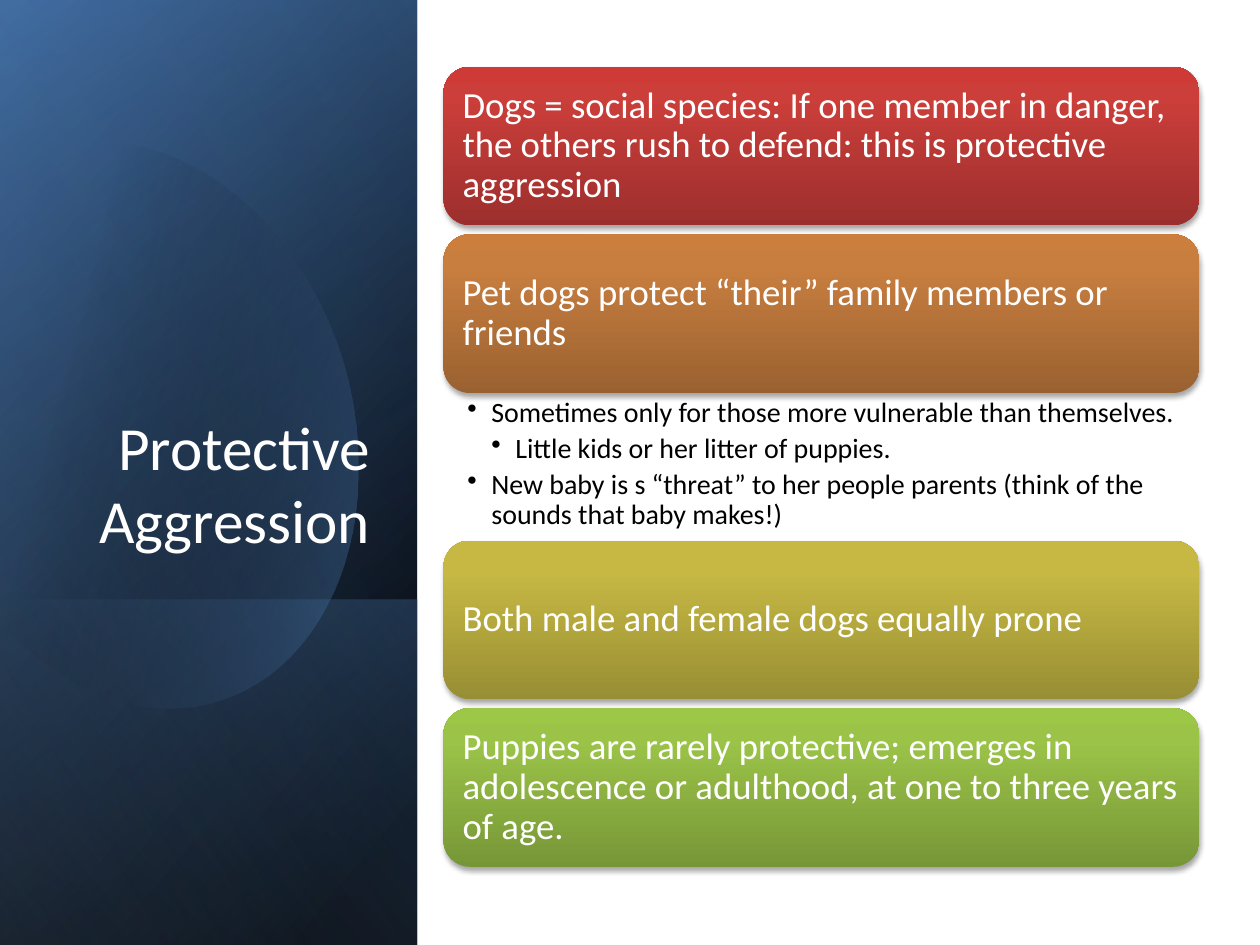
import itertools
from dataclasses import dataclass

import pptx
import pptx.dml.color
import pptx.enum.shapes
import pptx.enum.text
import pptx.oxml
import pptx.oxml.ns
import pptx.util

Inches = pptx.util.Inches
Pt = pptx.util.Pt
qn = pptx.oxml.ns.qn


@dataclass(frozen=True)
class Theme:
    font: str = "Calibri"
    light: str = "FFFFFF"
    dark: str = "000000"
    navy: str = "376092"
    blue: str = "4F81BD"
    pale_blue: str = "95B3D7"
    title_size: float = 35
    card_size: float = 21
    bullet_size: float = 16
    line_spacing: float = 0.9


@dataclass(frozen=True)
class Stop:
    position: int
    color: str
    opacity: int = 100


@dataclass(frozen=True)
class Panel:
    top: float
    height: float
    angle: float
    stops: tuple[Stop, ...]


@dataclass(frozen=True)
class Card:
    top: float
    text: str
    colors: tuple[str, str, str]


@dataclass(frozen=True)
class Bullet:
    text: str
    level: int


THEME = Theme()
PANEL_WIDTH = 3.31
CARD_LEFT, CARD_WIDTH, CARD_HEIGHT = 3.52, 6, 1.26
CARD_PITCH = 1.33
FIRST_PAIR_TOP, SECOND_PAIR_TOP = 0.53, 4.29
BULLET_INDENT = 0.19

BASE_PANELS = (
    Panel(0, 7.5, 50, (Stop(8, THEME.dark), Stop(100, THEME.navy))),
    Panel(0, 7.5, 30, (Stop(0, THEME.dark, 0), Stop(99, THEME.blue, 46))),
    Panel(4.76, 2.74, 130, (Stop(2, THEME.blue, 29), Stop(100, THEME.dark, 30))),
)
SHEEN_PANEL = Panel(0, 7.5, 120, (Stop(0, THEME.dark, 0), Stop(99, THEME.pale_blue, 11)))
OVAL_STOPS = (Stop(29, THEME.dark, 0), Stop(100, THEME.blue, 43))
OVAL_ANGLE = 14
OVAL_START = (0.96, 1.14)
OVAL_CURVES = (
    ((1.71, 1.22), (2.44, 1.92), (2.73, 2.9)),
    ((3.07, 4.12), (2.62, 5.31), (1.71, 5.57)),
    ((1.14, 5.74), (0.53, 5.5), (0.07, 5)),
    ((-0.03, 4.88),),
    ((-0.25, 1.66),),
    ((-0.15, 1.54),),
    ((0.02, 1.37), (0.22, 1.25), (0.45, 1.18)),
    ((0.62, 1.13), (0.79, 1.12), (0.96, 1.14)),
)
CARDS = (
    Card(FIRST_PAIR_TOP,
         "Dogs = social species: If one member in danger, the others rush to defend: "
         "this is protective aggression", ("9C2F2D", "CB3E3A", "CE3B37")),
    Card(FIRST_PAIR_TOP + CARD_PITCH,
         "Pet dogs protect “their” family members or friends", ("9A6130", "C87E3F", "CC7E3C")),
    Card(SECOND_PAIR_TOP,
         "Both male and female dogs equally prone", ("988E34", "C6B843", "C9BB41")),
    Card(SECOND_PAIR_TOP + CARD_PITCH,
         "Puppies are rarely protective; emerges in adolescence or adulthood, "
         "at one to three years of age.", ("779737", "9BC348", "9DC746")),
)
BULLETS = (
    Bullet("Sometimes only for those more vulnerable than themselves.", 1),
    Bullet("Little kids or her litter of puppies.", 2),
    Bullet("New baby is s “threat” to her people parents (think of the sounds that baby makes!)", 1),
)


def paint_gradient(shape, stops: tuple[Stop, ...], angle: float) -> None:
    shape.line.fill.background()
    shape.shadow.inherit = False
    shape.fill.background()
    stop_xml = "".join(
        f'<a:gs pos="{stop.position * 1000}"><a:srgbClr val="{stop.color}">'
        f'<a:alpha val="{stop.opacity * 1000}"/></a:srgbClr></a:gs>'
        for stop in stops
    )
    gradient = pptx.oxml.parse_xml(
        f'<a:gradFill {pptx.oxml.ns.nsdecls("a")} rotWithShape="1"><a:gsLst>{stop_xml}</a:gsLst>'
        f'<a:lin ang="{round(angle * 60000)}" scaled="0"/></a:gradFill>'
    )
    properties = shape.element.spPr
    properties.replace(properties.find(qn("a:noFill")), gradient)


def add_soft_shadow(shape) -> None:
    shape.element.spPr.find(qn("a:effectLst")).append(pptx.oxml.parse_xml(
        f'<a:outerShdw {pptx.oxml.ns.nsdecls("a")} blurRad="{Pt(3.1)}" dist="{Pt(1.8)}" '
        f'dir="5400000" rotWithShape="0"><a:srgbClr val="{THEME.dark}">'
        '<a:alpha val="35000"/></a:srgbClr></a:outerShdw>'
    ))


def format_runs(paragraph, size: float, color: str) -> None:
    for run in paragraph.runs:
        run.font.name = THEME.font
        run.font.size = Pt(size)
        run.font.color.rgb = pptx.dml.color.RGBColor.from_string(color)


def add_panel(slide, panel: Panel) -> None:
    left = (PANEL_WIDTH - panel.height) / 2
    top = panel.top + (panel.height - PANEL_WIDTH) / 2
    shape = slide.shapes.add_shape(
        pptx.enum.shapes.MSO_SHAPE.RECTANGLE,
        Inches(left), Inches(top), Inches(panel.height), Inches(PANEL_WIDTH))
    shape.rotation = 90
    shape.element.spPr.find(qn("a:xfrm")).set("flipH", "1")
    paint_gradient(shape, panel.stops, panel.angle)


def curve_points(start: tuple, controls: tuple, steps: int = 24) -> list[tuple]:
    if len(controls) == 1:
        return list(controls)
    points = []
    for step in range(1, steps + 1):
        t = step / steps
        weights = ((1 - t) ** 3, 3 * t * (1 - t) ** 2, 3 * t ** 2 * (1 - t), t ** 3)
        points.append(tuple(
            sum(weight * point[axis] for weight, point in zip(weights, (start, *controls)))
            for axis in (0, 1)))
    return points


def add_oval(slide) -> None:
    starts = (OVAL_START, *(curve[-1] for curve in OVAL_CURVES))
    points = itertools.chain.from_iterable(map(curve_points, starts, OVAL_CURVES))
    builder = slide.shapes.build_freeform(*map(Inches, OVAL_START))
    builder.add_line_segments([(Inches(x), Inches(y)) for x, y in points], close=True)
    paint_gradient(builder.convert_to_shape(), OVAL_STOPS, OVAL_ANGLE)


def add_title(slide, text: str) -> None:
    box = slide.shapes.add_textbox(Inches(0.48), Inches(1.84), Inches(2.56), Inches(2.62))
    frame = box.text_frame
    frame.word_wrap = True
    frame.vertical_anchor = pptx.enum.text.MSO_ANCHOR.BOTTOM
    frame.text = text
    frame.paragraphs[0].alignment = pptx.enum.text.PP_ALIGN.RIGHT
    format_runs(frame.paragraphs[0], THEME.title_size, THEME.light)


def add_card(slide, card: Card) -> None:
    shape = slide.shapes.add_shape(
        pptx.enum.shapes.MSO_SHAPE.ROUNDED_RECTANGLE,
        Inches(CARD_LEFT), Inches(card.top), Inches(CARD_WIDTH), Inches(CARD_HEIGHT))
    paint_gradient(shape, tuple(map(Stop, (0, 80, 100), card.colors)), 270)
    add_soft_shadow(shape)
    frame = shape.text_frame
    frame.word_wrap = True
    frame.vertical_anchor = pptx.enum.text.MSO_ANCHOR.MIDDLE
    frame.margin_left = frame.margin_right = Inches(0.09)
    frame.margin_top = frame.margin_bottom = Inches(0.09)
    frame.text = card.text
    paragraph = frame.paragraphs[0]
    paragraph.alignment = pptx.enum.text.PP_ALIGN.LEFT
    paragraph.line_spacing = THEME.line_spacing
    format_runs(paragraph, THEME.card_size, THEME.light)


def add_bullets(slide, bullets: tuple[Bullet, ...]) -> None:
    box = slide.shapes.add_textbox(
        Inches(CARD_LEFT), Inches(3.13), Inches(CARD_WIDTH), Inches(1.16))
    frame = box.text_frame
    frame.word_wrap = True
    frame.margin_left, frame.margin_right = Inches(0.19), Inches(0.16)
    frame.margin_top = frame.margin_bottom = Inches(0.03)
    frame.text = "\n".join(bullet.text for bullet in bullets)
    for paragraph, bullet in zip(frame.paragraphs, bullets):
        paragraph.level = bullet.level
        paragraph.line_spacing = THEME.line_spacing
        paragraph.space_after = Pt(3.4)
        properties = paragraph._p.get_or_add_pPr()
        properties.set("marL", str(Inches(BULLET_INDENT * bullet.level)))
        properties.set("indent", str(Inches(-BULLET_INDENT)))
        properties.append(pptx.oxml.parse_xml(
            f'<a:buChar {pptx.oxml.ns.nsdecls("a")} char="•"/>'))
        format_runs(paragraph, THEME.bullet_size, THEME.dark)


def main() -> None:
    presentation = pptx.Presentation()
    presentation.slide_width, presentation.slide_height = Inches(10), Inches(7.5)
    slide = presentation.slides.add_slide(presentation.slide_layouts[6])
    for panel in BASE_PANELS:
        add_panel(slide, panel)
    add_oval(slide)
    add_panel(slide, SHEEN_PANEL)
    add_title(slide, "Protective Aggression")
    for card in CARDS:
        add_card(slide, card)
    add_bullets(slide, BULLETS)
    presentation.save("out.pptx")


if __name__ == "__main__":
    main()
